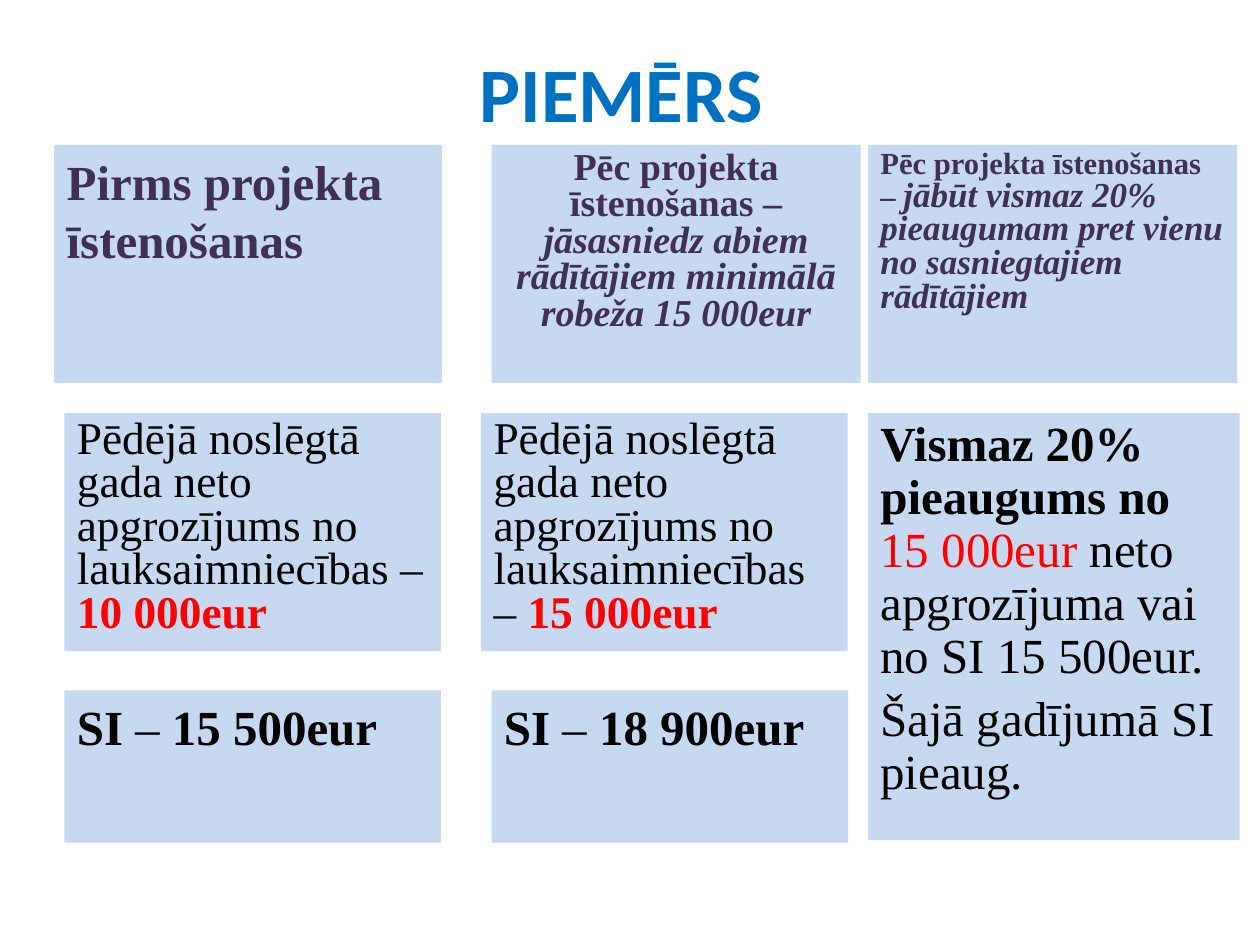
from lxml.etree import SubElement
from pptx import Presentation
from pptx.dml.color import RGBColor
from pptx.enum.shapes import MSO_SHAPE
from pptx.enum.text import MSO_ANCHOR, MSO_AUTO_SIZE, PP_ALIGN
from pptx.oxml.ns import qn
from pptx.util import Cm, Pt

BLUE = RGBColor(0x00, 0x70, 0xC0)
PALE_BLUE = RGBColor(0xC6, 0xD9, 0xF1)
PURPLE = RGBColor(0x40, 0x31, 0x52)
BLACK = RGBColor(0, 0, 0)
RED = RGBColor(0xFF, 0, 0)

HEAD_TOP, TURNOVER_TOP, SI_TOP = 2.92, 8.33, 13.92
BOX_H, SI_H = 4.8, 3.07
RIGHT_X = 17.5


def add_run(p, text, size=28, font="Times New Roman", color=BLACK, bold=False, italic=False):
    r = p.add_run()
    r.text = text
    r.font.size = Pt(size)
    r.font.name = font
    r.font.color.rgb = color
    r.font.bold = bold
    r.font.italic = italic


def place(sp, left, top, width, height):
    sp.left, sp.top, sp.width, sp.height = Cm(left), Cm(top), Cm(width), Cm(height)


def add_title(s, text):
    sp = s.shapes.title
    place(sp, 1.27, 0.76, 22.86, 2.16)
    tf = sp.text_frame
    tf.auto_size = MSO_AUTO_SIZE.NONE
    tf.vertical_anchor = MSO_ANCHOR.MIDDLE
    p = tf.paragraphs[0]
    p.alignment = PP_ALIGN.CENTER
    add_run(p, text, size=44, font="Calibri", color=BLUE, bold=True)


def fill_box(sp, paragraphs, align=PP_ALIGN.LEFT, spacing=1.0):
    sp.fill.solid()
    sp.fill.fore_color.rgb = PALE_BLUE
    sp.line.fill.background()
    tf = sp.text_frame
    tf.word_wrap = True
    tf.auto_size = MSO_AUTO_SIZE.NONE
    tf.vertical_anchor = MSO_ANCHOR.TOP
    for i, runs in enumerate(paragraphs):
        p = tf.add_paragraph() if i else tf.paragraphs[0]
        p.alignment = align
        p.line_spacing = spacing
        p.space_before = Pt(round(0.2 * runs[0][1].get("size", 28), 1))
        for text, fmt in runs:
            add_run(p, text, **fmt)


def add_box(s, left, top, width, height, paragraphs, **fmt):
    sp = s.shapes.add_shape(MSO_SHAPE.RECTANGLE, Cm(left), Cm(top), Cm(width), Cm(height))
    sp.shadow.inherit = False
    fill_box(sp, paragraphs, **fmt)


def add_body(s, left, top, width, height, text):
    sp = s.placeholders[1]
    place(sp, left, top, width, height)
    fill_box(sp, [[(text, dict(color=PURPLE, bold=True))]])
    pPr = sp.text_frame.paragraphs[0]._p.get_or_add_pPr()
    pPr.set("marL", "0")
    pPr.set("indent", "0")
    SubElement(pPr, qn("a:buNone"))


def add_turnover(s, left, width, amount):
    text = "Pēdējā noslēgtā gada neto apgrozījums no lauksaimniecības – "
    runs = [(text, dict(size=25.9)), (amount, dict(size=25.9, color=RED, bold=True))]
    add_box(s, left, TURNOVER_TOP, width, BOX_H, [runs], spacing=0.8)


def add_si(s, left, width, amount):
    runs = [("SI", dict(bold=True)), (" – ", {}), (amount, dict(bold=True))]
    add_box(s, left, SI_TOP, width, SI_H, [runs])


def add_after_heading(s, left, size, condition, condition_size, align):
    head = dict(color=PURPLE, bold=True)
    runs = [("Pēc projekta īstenošanas – ", dict(head, size=size)),
            (condition, dict(head, size=condition_size, italic=True))]
    add_box(s, left, HEAD_TOP, 7.44, BOX_H, [runs], align=align, spacing=0.8)


def main():
    prs = Presentation()
    prs.slide_width, prs.slide_height = Cm(25.4), Cm(19.05)
    s = prs.slides.add_slide(prs.slide_layouts[1])
    add_title(s, "PIEMĒRS ")
    add_body(s, 1.09, HEAD_TOP, 7.82, BOX_H, "Pirms projekta īstenošanas")
    add_turnover(s, 1.3, 7.59, "10 000eur")
    add_si(s, 1.3, 7.59, "15 500eur")
    add_after_heading(s, 9.91, 21.7, "jāsasniedz abiem rādītājiem minimālā robeža 15 000eur",
                      21.7, PP_ALIGN.CENTER)
    add_after_heading(s, RIGHT_X, 17.5,
                      "jābūt vismaz 20% pieaugumam pret vienu no sasniegtajiem rādītājiem",
                      20, PP_ALIGN.LEFT)
    add_turnover(s, 9.7, 7.39, "15 000eur")
    add_si(s, 9.91, 7.19, "18 900eur")
    add_box(s, RIGHT_X, TURNOVER_TOP, 7.49, 8.61, [
        [("Vismaz 20% pieaugums no ", dict(bold=True)),
         ("15 000eur", dict(color=RED)),
         (" neto apgrozījuma vai no SI 15 500eur.", {})],
        [("Šajā gadījumā SI pieaug.", {})],
    ], spacing=0.9)
    prs.save("out.pptx")


if __name__ == "__main__":
    main()
